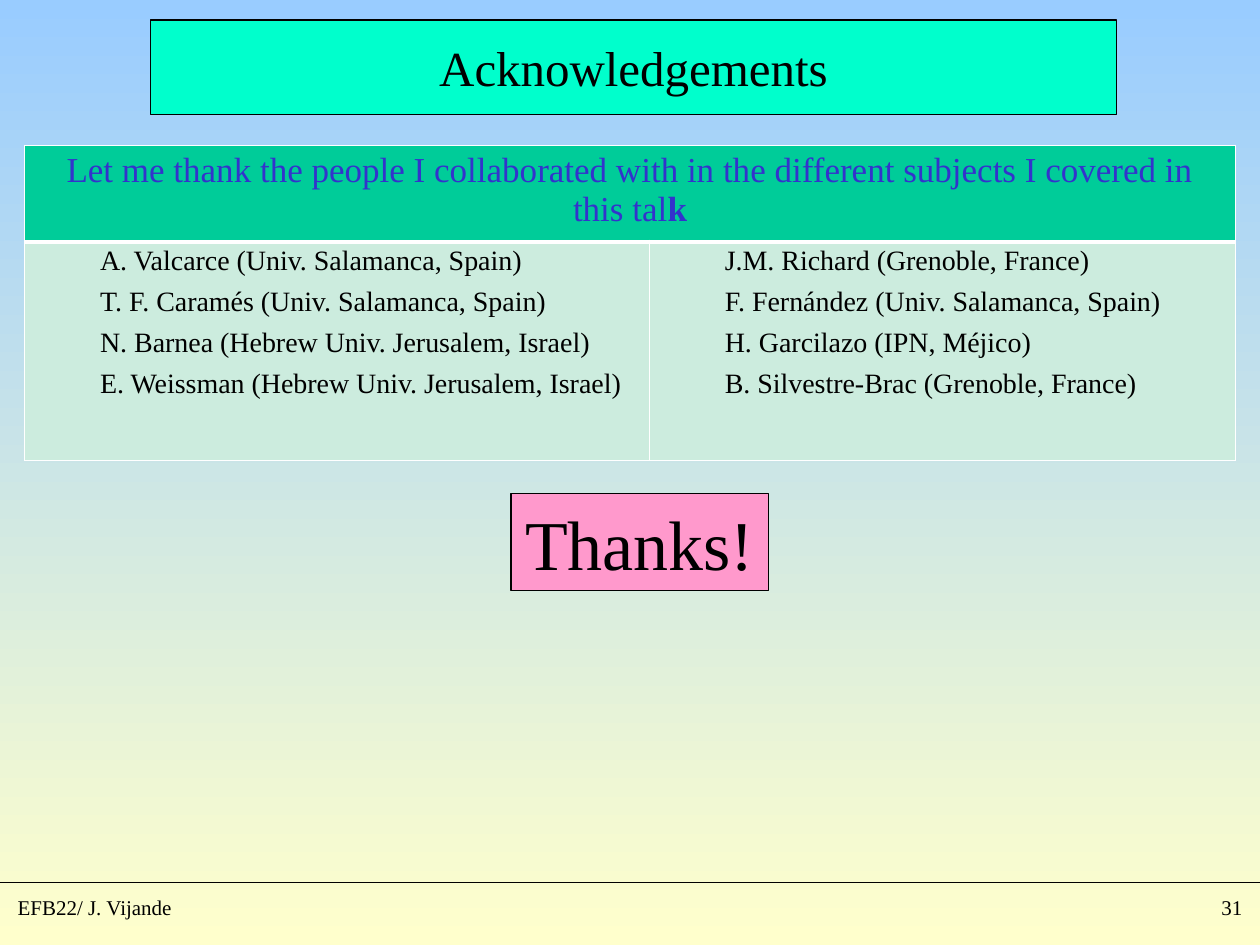
from lxml import etree
from pptx import Presentation
from pptx.dml.color import RGBColor
from pptx.enum import shapes, text
from pptx.oxml.ns import qn
from pptx.util import Pt

# Content
TITLE = "Acknowledgements"
HEAD = [
    ("Let me thank the people I collaborated with in the different "
     "subjects I covered in this tal", False),
    ("k", True),
]
PEOPLE = [
    ["A. Valcarce (Univ. Salamanca, Spain)",
     "T. F. Caramés (Univ. Salamanca, Spain)",
     "N. Barnea (Hebrew Univ. Jerusalem, Israel)",
     "E. Weissman (Hebrew Univ. Jerusalem, Israel)"],
    ["J.M. Richard (Grenoble, France)",
     "F. Fernández (Univ. Salamanca, Spain)",
     "H. Garcilazo (IPN, Méjico)",
     "B. Silvestre-Brac (Grenoble, France)"],
]
CLOSE = "Thanks!"
LEFT, MID, RIGHT = text.PP_ALIGN.LEFT, text.PP_ALIGN.CENTER, text.PP_ALIGN.RIGHT
FOOT = [("EFB22/ J. Vijande", 3, 181, LEFT), ("31", 567, 150, RIGHT)]


class Theme:
    font = "Times New Roman"
    ink, white, blue = "000000", "FFFFFF", "3333CC"
    sky, cream = "99CCFF", "FFFFCC"
    aqua, pink, green, mint = "00FFCC", "FF99CC", "00CC99", "CCECDE"
    title, head, body, close, foot = 28, 20, 16, 40, 12
    line = 0.75


def rgb(code):
    return RGBColor.from_string(code)


def add_run(para, words, size, color=Theme.ink, bold=False):
    run = para.add_run()
    run.text = words
    font = run.font
    font.name, font.size, font.bold = Theme.font, Pt(size), bold
    font.color.rgb = rgb(color)


def place(shape, *box):
    shape.left, shape.top, shape.width, shape.height = map(Pt, box)


def paint(shape, fill):
    shape.fill.solid()
    shape.fill.fore_color.rgb = rgb(fill)
    shape.line.color.rgb = rgb(Theme.ink)
    shape.line.width = Pt(Theme.line)


def label(shape, words, size):
    frame = shape.text_frame
    frame.vertical_anchor = text.MSO_ANCHOR.MIDDLE
    para = frame.paragraphs[0]
    para.alignment = MID
    add_run(para, words, size)


def style(cell, fill, top=1, bottom=1):
    props = cell._tc.get_or_add_tcPr()
    for side, width in (("L", 1), ("R", 1), ("T", top), ("B", bottom)):
        edge = etree.SubElement(props, qn("a:ln" + side), w=str(Pt(width)))
        solid = etree.SubElement(edge, qn("a:solidFill"))
        etree.SubElement(solid, qn("a:srgbClr"), val=Theme.white)
    cell.fill.solid()
    cell.fill.fore_color.rgb = rgb(fill)


deck = Presentation()
deck.slide_width, deck.slide_height = Pt(720), Pt(540)
slide = deck.slides.add_slide(deck.slide_layouts[5])
parts = slide.shapes

# Background
back = slide.background.fill
back.gradient()
back.gradient_angle = 270
for stop, color, spot in zip(back.gradient_stops, (Theme.sky, Theme.cream), (0, 1)):
    stop.color.rgb = rgb(color)
    stop.position = spot

# Footer
rule = parts.add_connector(shapes.MSO_CONNECTOR.STRAIGHT, 0, Pt(504.5), Pt(720), Pt(504.5))
rule.line.color.rgb = rgb(Theme.ink)
rule.line.width = Pt(Theme.line)
etree.SubElement(rule._element.spPr, qn("a:effectLst"))
for words, left, width, align in FOOT:
    note = parts.add_textbox(Pt(left), Pt(507.5), Pt(width), Pt(30))
    note.text_frame.word_wrap = True
    para = note.text_frame.paragraphs[0]
    para.alignment = align
    add_run(para, words, Theme.foot)

# Title
place(parts.title, 86, 11.5, 552, 54)
paint(parts.title, Theme.aqua)
label(parts.title, TITLE, Theme.title)

# Closing box
box = parts.add_shape(shapes.MSO_SHAPE.RECTANGLE, Pt(292), Pt(282), Pt(147), Pt(55.5))
box.shadow.inherit = False
paint(box, Theme.pink)
box.text_frame.word_wrap = False
label(box, CLOSE, Theme.close)

# Table of collaborators
cols, rows = (357, 335), (55, 125)
grid = parts.add_table(2, 2, Pt(14), Pt(83), Pt(sum(cols)), Pt(sum(rows))).table
grid.horz_banding = False
for col, width in zip(grid.columns, cols):
    col.width = Pt(width)
for row, height in zip(grid.rows, rows):
    row.height = Pt(height)

for cell in grid.rows[0].cells:
    style(cell, Theme.green, bottom=3)
head = grid.cell(0, 0)
head.merge(grid.cell(0, 1))
para = head.text_frame.paragraphs[0]
para.alignment = MID
for words, bold in HEAD:
    add_run(para, words, Theme.head, Theme.blue, bold)

for cell, names in zip(grid.rows[1].cells, PEOPLE):
    style(cell, Theme.mint, top=3)
    frame = cell.text_frame
    for i, name in enumerate(names):
        para = frame.add_paragraph() if i else frame.paragraphs[0]
        para.level = 1
        para.alignment = LEFT
        para.line_spacing = 0.9
        para.space_before = Pt(7.5 if i else 0)
        props = para._p.get_or_add_pPr()
        props.set("marL", str(Pt(36)))
        props.set("indent", "0")
        add_run(para, name, Theme.body)

deck.save("out.pptx")
